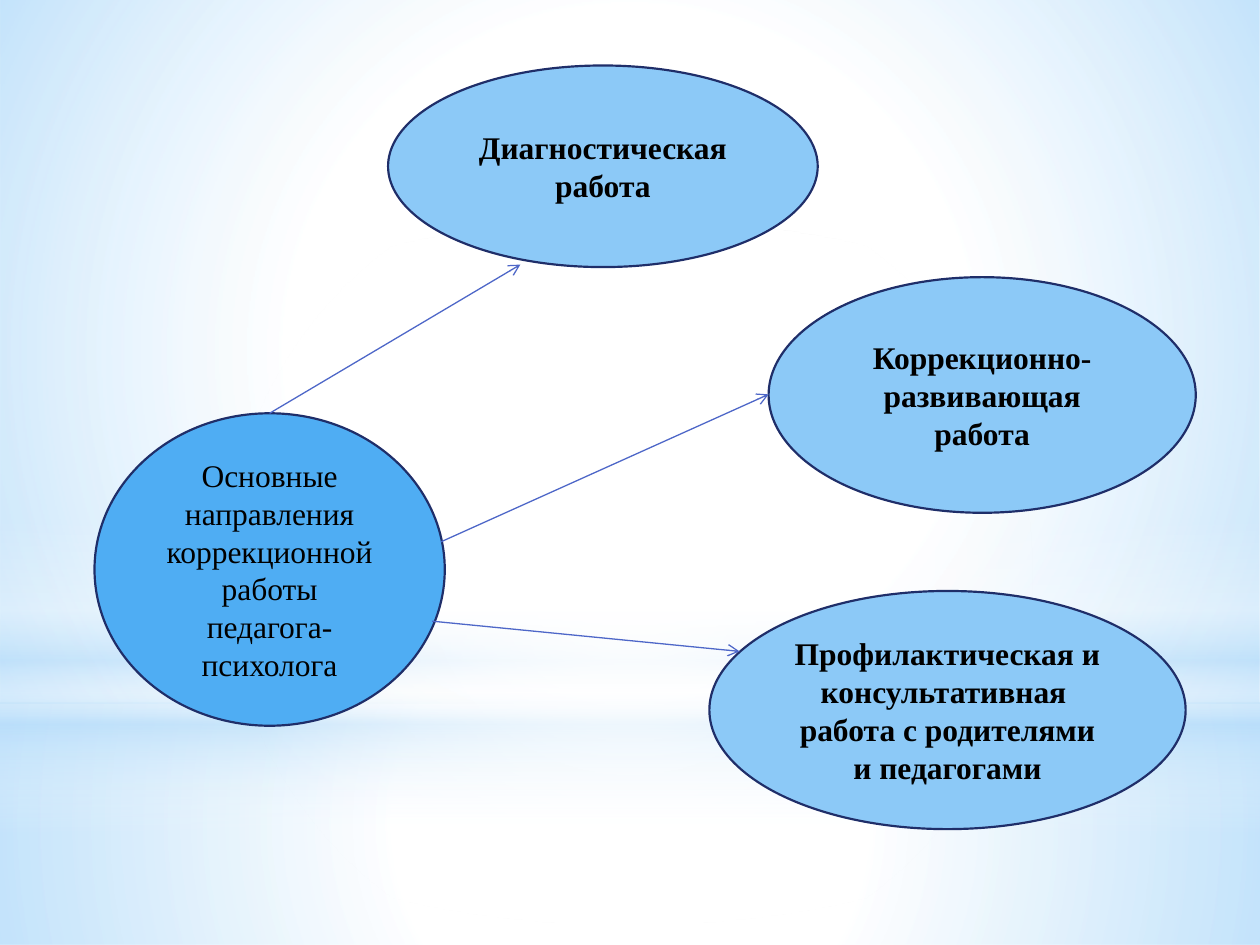
from dataclasses import dataclass

from lxml import etree
from pptx import Presentation
from pptx.dml.color import RGBColor
from pptx.enum.shapes import MSO_CONNECTOR, MSO_SHAPE
from pptx.enum.text import MSO_ANCHOR, PP_ALIGN
from pptx.oxml import parse_xml
from pptx.oxml.ns import nsdecls, qn
from pptx.util import Inches, Pt

RECT, OVAL = MSO_SHAPE.RECTANGLE, MSO_SHAPE.OVAL
NODE = MSO_SHAPE.FLOWCHART_CONNECTOR
LINE = MSO_CONNECTOR.STRAIGHT
MIDDLE, CENTER = MSO_ANCHOR.MIDDLE, PP_ALIGN.CENTER

COLS, ROWS = 100, 75
WIDE, HIGH = Inches(10), Inches(7.5)


@dataclass(frozen=True)
class Theme:
    white: str = "FFFFFF"
    sky: str = "B4DCFA"
    main: str = "4FADF3"
    pale: str = "8CC9F7"
    edge: str = "1F2E69"
    arrow: str = "4E67C8"
    ink: str = "000000"
    font: str = "Times New Roman"
    size: float = 18
    rim: float = 1.25
    thin: float = 0.75


THEME = Theme()

RADIAL = ('<a:path path="circle">'
          '<a:fillToRect l="50000" t="50000" r="50000" b="50000"/></a:path>')
DOWN = '<a:lin ang="5400000" scaled="0"/>'

# Backdrop: kind, box in grid units, direction, stops (place, colour, opacity)
GLOWS = [
    (RECT, (0, 55.8, 100, 19.2), RADIAL,
     [(0, THEME.white, 91), (37, THEME.white, 76), (100, THEME.sky, 79)]),
    (RECT, (0, 0, 100, 55.8), RADIAL,
     [(0, THEME.white, 89), (48, THEME.white, 62), (100, THEME.sky, 79)]),
    (RECT, (0, 41.2, 100, 25), DOWN,
     [(0, THEME.white, 0), (29, THEME.white, 30), (45, THEME.sky, 40),
      (55, THEME.white, 26), (65, THEME.sky, 60), (100, THEME.white, 0)]),
    (OVAL, (0, 17.5, 100, 55.8), RADIAL,
     [(0, THEME.white, 100), (56, THEME.white, 0)]),
]

HUB = ((7.5, 32.8, 27.8, 24.8),
       "Основные направления коррекционной работы педагога-психолога")

TASKS = [
    ((30.8, 5.2, 34.1, 16), "Диагностическая работа"),
    ((61, 22, 33.9, 18.7), "Коррекционно-развивающая работа"),
    ((56.3, 46.9, 37.8, 18.9),
     "Профилактическая и консультативная \nработа с родителями и педагогами"),
]

ARROWS = [
    ((35, 43), (61, 31.3)),
    ((34.3, 49.3), (58.7, 51.7)),
    ((21.4, 32.8), (41.3, 21)),
]


def across(col):
    return int(WIDE * col / COLS)


def down(row):
    return int(HIGH * row / ROWS)


def add_form(slide, kind, box):
    left, top, width, height = box
    form = slide.shapes.add_shape(
        kind, across(left), down(top), across(width), down(height))
    form.shadow.inherit = False
    return form


def add_glow(slide, kind, box, way, stops):
    form = add_form(slide, kind, box)
    form.line.fill.background()
    form.fill.background()
    marks = "".join(
        f'<a:gs pos="{place * 1000}"><a:srgbClr val="{tint}">'
        f'<a:alpha val="{alpha * 1000}"/></a:srgbClr></a:gs>'
        for place, tint, alpha in stops)
    grad = parse_xml(f'<a:gradFill {nsdecls("a")} rotWithShape="1">'
                     f'<a:gsLst>{marks}</a:gsLst>{way}</a:gradFill>')
    props = form._element.spPr
    props.replace(props.find(qn("a:noFill")), grad)


def add_node(slide, kind, box, text, fill, bold):
    node = add_form(slide, kind, box)
    node.fill.solid()
    node.fill.fore_color.rgb = RGBColor.from_string(fill)
    node.line.color.rgb = RGBColor.from_string(THEME.edge)
    node.line.width = Pt(THEME.rim)
    frame = node.text_frame
    frame.word_wrap = True
    frame.vertical_anchor = MIDDLE
    frame.text = text
    for para in frame.paragraphs:
        para.alignment = CENTER
        for run in para.runs:
            run.font.name = THEME.font
            run.font.size = Pt(THEME.size)
            run.font.bold = bold
            run.font.color.rgb = RGBColor.from_string(THEME.ink)


def add_arrow(slide, start, end):
    arrow = slide.shapes.add_connector(
        LINE, across(start[0]), down(start[1]), across(end[0]), down(end[1]))
    arrow.line.color.rgb = RGBColor.from_string(THEME.arrow)
    arrow.line.width = Pt(THEME.thin)
    etree.SubElement(arrow.line._get_or_add_ln(), qn("a:tailEnd"), type="arrow")
    etree.SubElement(arrow._element.spPr, qn("a:effectLst"))


def main():
    deck = Presentation()
    deck.slide_width, deck.slide_height = WIDE, HIGH
    slide = deck.slides.add_slide(deck.slide_layouts[6])

    # Soft blue backdrop
    for glow in GLOWS:
        add_glow(slide, *glow)

    # Hub and the three lines of work
    add_node(slide, OVAL, *HUB, THEME.main, False)
    for box, text in TASKS:
        add_node(slide, NODE, box, text, THEME.pale, True)

    # Arrows from the hub
    for start, end in ARROWS:
        add_arrow(slide, start, end)

    deck.save("out.pptx")


if __name__ == "__main__":
    main()
